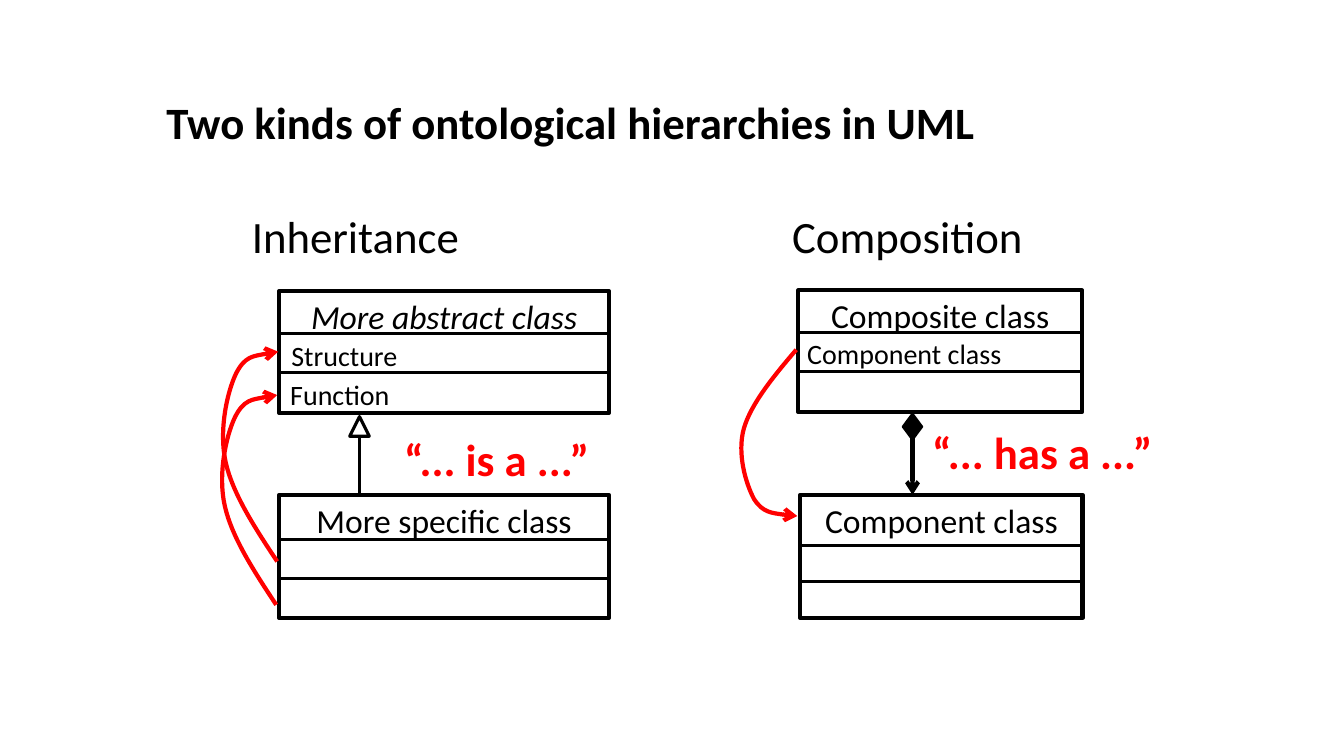
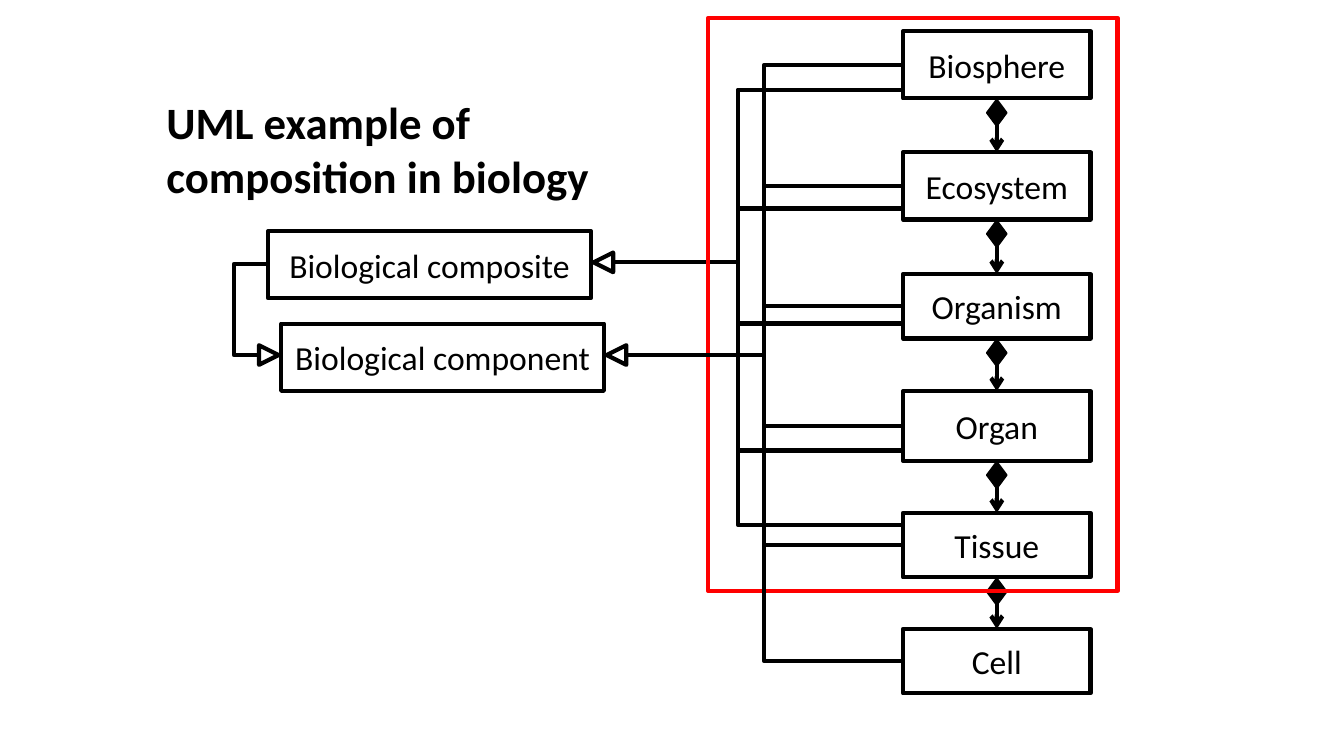
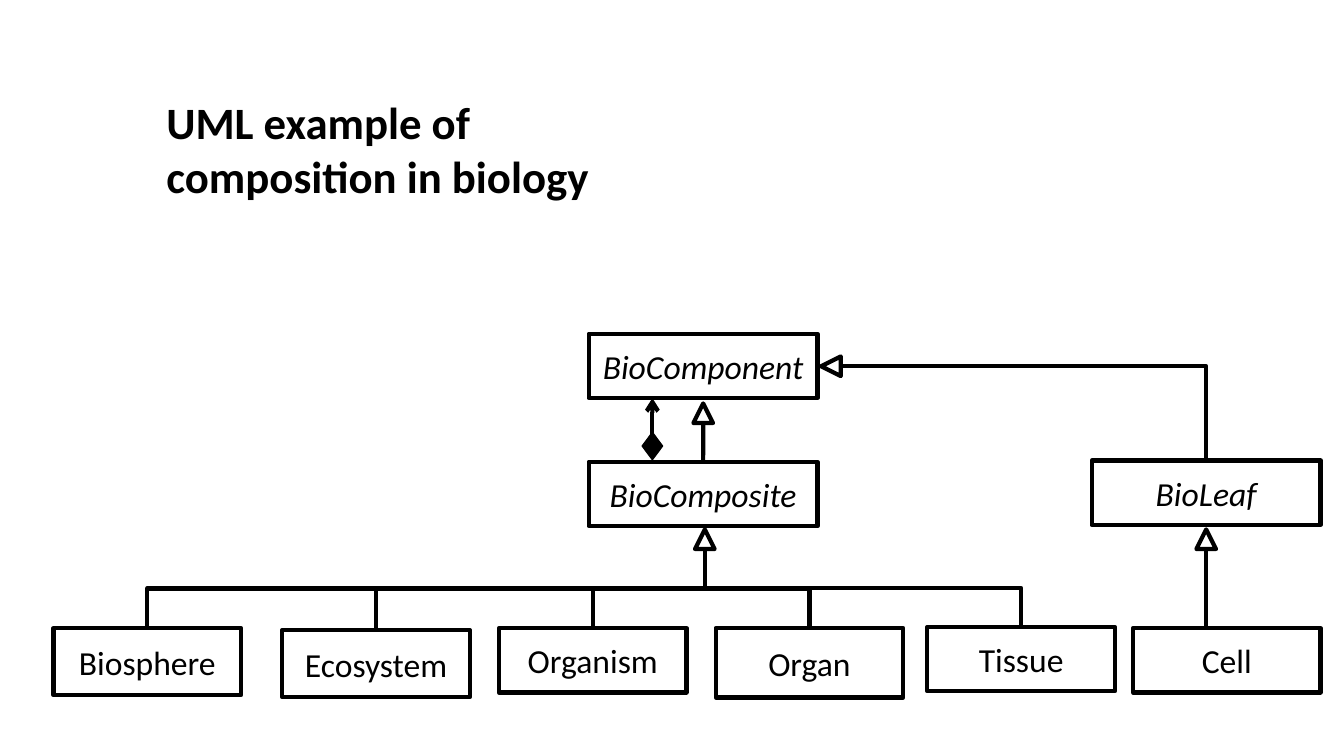
from lxml import etree
from pptx import Presentation
from pptx.dml.color import RGBColor
from pptx.enum import shapes, text
from pptx.oxml.ns import qn
from pptx.util import Pt

COLORS = {"ink": "000000", "accent": "FF0000", "paper": "FFFFFF"}
FONT = "Calibri"
DIAMOND_W, DIAMOND_H = 14.5, 19.5
TRIANGLE = 14
LEVEL_W = 134
LEVELS = ["Biosphere", "Ecosystem", "Organism", "Organ", "Tissue", "Cell"]
LEVEL_HEIGHTS = [48, 48, 46, 49.7, 46, 46]


def rgb(name):
    return RGBColor.from_string(COLORS[name])


class Deck:
    """Holds the shared style and the current slide."""

    def __init__(self):
        self.prs = Presentation()
        self.prs.slide_width, self.prs.slide_height = Pt(960), Pt(540)
        self.s = None

    def slide(self, title, width, height):
        self.s = self.prs.slides.add_slide(self.prs.slide_layouts[5])
        sp = self.s.shapes.title
        sp.left, sp.top, sp.width, sp.height = Pt(111.6), Pt(64), Pt(width), Pt(height)
        self.set_text(sp, title, 32, bold=True)

    # Text and lines
    def set_text(self, sp, words, size, color="ink", bold=False, italic=False,
                 center=False, middle=False, wrap=True):
        tf = sp.text_frame
        tf.text = words
        tf.word_wrap = wrap
        tf.auto_size = text.MSO_AUTO_SIZE.NONE
        tf.vertical_anchor = text.MSO_ANCHOR.MIDDLE if middle else text.MSO_ANCHOR.TOP
        p = tf.paragraphs[0]
        p.alignment = text.PP_ALIGN.CENTER if center else text.PP_ALIGN.LEFT
        f = p.runs[0].font
        f.name, f.size, f.bold, f.italic = FONT, Pt(size), bold, italic
        f.color.rgb = rgb(color)

    def outline(self, sp, width=3, color="ink", arrow=False):
        sp.line.color.rgb = rgb(color)
        sp.line.width = Pt(width)
        if arrow:
            ln = sp.line._get_or_add_ln()
            etree.SubElement(ln, qn("a:tailEnd"), type="arrow")

    def label(self, words, x, y, w, h=46, size=32, **style):
        sp = self.s.shapes.add_textbox(Pt(x), Pt(y), Pt(w), Pt(h))
        self.set_text(sp, words, size, wrap=False, **style)

    # Shapes
    def shape(self, kind, x, y, w, h, fill=None, width=3, color="ink"):
        sp = self.s.shapes.add_shape(kind, Pt(x), Pt(y), Pt(w), Pt(h))
        sp.shadow.inherit = False
        if fill:
            sp.fill.solid()
            sp.fill.fore_color.rgb = rgb(fill)
        else:
            sp.fill.background()
        self.outline(sp, width, color)
        return sp

    def box(self, words, x, y, w, h, fill=None, italic=False, middle=True):
        sp = self.shape(shapes.MSO_SHAPE.RECTANGLE, x, y, w, h, fill)
        self.set_text(sp, words, 24, italic=italic, center=True, middle=middle)
        return sp

    def uml_class(self, words, x, y, w, h, rules, italic=False):
        self.box(words, x, y, w, h, italic=italic, middle=False)
        for rule in rules:
            self.line(x, y + rule, x + w, y + rule, 2.25)

    def triangle(self, cx, cy, rotation=0, width=3):
        half = TRIANGLE / 2
        sp = self.shape(shapes.MSO_SHAPE.ISOSCELES_TRIANGLE, cx - half, cy - half,
                        TRIANGLE, TRIANGLE, "paper", width)
        sp.rotation = rotation

    def composition(self, x, y, end_y, part=None):
        """Diamond centred on x, y with an arrow to the part."""
        self.shape(shapes.MSO_SHAPE.DIAMOND, x - DIAMOND_W / 2, y - DIAMOND_H / 2,
                   DIAMOND_W, DIAMOND_H, "ink", 1)
        c = self.line(x, y, x, end_y, arrow=True)
        if part is not None:
            c.end_connect(part, 0)

    # Connectors
    def connector(self, kind, x1, y1, x2, y2, width=3, arrow=False):
        c = self.s.shapes.add_connector(kind, Pt(x1), Pt(y1), Pt(x2), Pt(y2))
        self.outline(c, width, arrow=arrow)
        etree.SubElement(c._element.spPr, qn("a:effectLst"))
        return c

    def line(self, x1, y1, x2, y2, width=3, arrow=False):
        return self.connector(shapes.MSO_CONNECTOR.STRAIGHT, x1, y1, x2, y2, width, arrow)

    def elbow(self, x1, y1, x2, y2, via_x):
        """Leaves sideways and turns at via_x."""
        c = self.connector(shapes.MSO_CONNECTOR.ELBOW, x1, y1, x2, y2)
        geom = c._element.spPr.find(qn("a:prstGeom"))
        av = geom.find(qn("a:avLst"))
        if av is None:
            av = etree.SubElement(geom, qn("a:avLst"))
        share = round((via_x - x1) / (x2 - x1) * 100000)
        etree.SubElement(av, qn("a:gd"), name="adj1", fmla=f"val {share}")

    def drop(self, x1, y1, x2, y2):
        """Leaves downwards and turns halfway: a sideways elbow, rotated."""
        cx, cy = (x1 + x2) / 2, (y1 + y2) / 2
        w, h = (y2 - y1) / 2, abs(x2 - x1) / 2
        side = 1 if x2 > x1 else -1
        c = self.connector(shapes.MSO_CONNECTOR.ELBOW,
                           cx + side * w, cy - h, cx - side * w, cy + h)
        c._element.spPr.xfrm.set("rot", "16200000" if side > 0 else "5400000")

    def corner(self, x1, y1, x2, y2):
        c = self.connector(shapes.MSO_CONNECTOR.ELBOW, x1, y1, x2, y2)
        c._element.spPr.find(qn("a:prstGeom")).set("prst", "bentConnector2")

    def curve(self, x, y, steps):
        """Red arrow of cubic curves; steps are offsets from the start."""
        fb = self.s.shapes.build_freeform(Pt(x), Pt(y))
        fb.add_line_segments([(Pt(x + dx), Pt(y + dy)) for dx, dy in steps], close=False)
        sp = fb.convert_to_shape()
        sp.shadow.inherit = False
        sp.fill.background()
        self.outline(sp, 3, "accent", arrow=True)
        outline = sp._element.spPr.find(".//" + qn("a:path"))
        segments = outline.findall(qn("a:lnTo"))
        for i in range(0, len(segments), 3):
            bezier = etree.SubElement(outline, qn("a:cubicBezTo"))
            for segment in segments[i:i + 3]:
                bezier.append(segment[0])
                outline.remove(segment)


def hierarchies(d):
    d.slide("Two kinds of ontological hierarchies in UML", 598, 46)
    d.label("Inheritance", 172.8, 145.4, 167)
    d.label("Composition", 558.7, 145.4, 181)

    # Inheritance
    d.uml_class("More specific class", 199.5, 353.5, 235.5, 88, (32, 60))
    d.uml_class("More abstract class", 199.5, 208, 235.5, 87, (30.3, 58.4), italic=True)
    d.label("Structure", 201, 238.3, 194, 31.5, 20)
    d.label("Function", 200.2, 266.4, 194, 31.5, 20)
    d.triangle(256.8, 304.6, width=2.25)
    d.line(256.8, 353, 256.8, 311.8, 2.25)
    d.label("“... is a ...”", 281.5, 304.6, 148, color="accent", bold=True)
    up = [(-15.8, -23.8), (-31.7, -48.2), (-36.7, -70.6), (-41.8, -92.9), (-36, -120.2),
          (-29.5, -133.9), (-23, -146.9), (-9.4, -148.3), (0.7, -149.8)]
    for x, y in ((198, 401), (197.3, 432)):
        d.curve(x, y, up)

    # Composition
    d.uml_class("Composite class", 570.3, 207.4, 202.5, 87, (30.2, 57.9))
    d.label("Component class", 569.5, 236.9, 155, 31.5, 20)
    d.composition(651.8, 304.8, 353.5)
    d.uml_class("Component class", 571.7, 353.5, 201.6, 88, (36.4, 61.9))
    d.label("“... has a ...”", 658.8, 299.5, 173, color="accent", bold=True)
    d.curve(568.8, 249.8, [(-16.6, 19.4), (-32.4, 38.9), (-37.4, 56.2), (-42.5, 74.2),
                           (-36, 95.8), (-30.2, 106.6), (-23.8, 116.6), (-10.1, 118.1),
                           (0.7, 118.8)])


def biology_levels(d):
    d.slide("UML example of composition in biology", 320, 85)

    # Chain of levels
    x, cx = 645, 645 + LEVEL_W / 2
    tops = [22.3, 108.8, 195.8, 279.4, 366.4, 449.3]
    bottom = None
    for name, top, height in zip(LEVELS, tops, LEVEL_HEIGHTS):
        level = d.box(name, x, top, LEVEL_W, height)
        if bottom is not None:
            d.composition(cx, bottom + DIAMOND_H / 2 + 0.5, top, level)
        bottom = top + height

    # Composites: every level but the last
    d.box("Biological composite", 191.5, 165, 230.5, 48)
    d.triangle(431, 187.4, 270)
    for y in (64, 149, 231.1, 321.8, 375):
        d.elbow(x, y, 438, 187.4, 527)
    d.shape(shapes.MSO_SHAPE.RECTANGLE, 506, 12.7, 292.3, 409.5, color="accent")

    # Components: all levels
    d.triangle(192, 253.6, 90)
    d.elbow(191.5, 188.6, 185, 253.6, 167)
    d.box("Biological component", 200.9, 231.2, 230.5, 48)
    d.triangle(440.4, 253.6, 270)
    for top, height in zip(tops, LEVEL_HEIGHTS):
        d.elbow(x, top + height / 2, 447.2, 253.6, 546)


def biology_pattern(d):
    d.slide("UML example of composition in biology", 320, 85)

    # Concrete classes
    lefts = [38.2, 201.6, 356.4, 511.2, 662.4, 809.3]
    tops = [448.6, 450, 448.6, 448.6, 447.8, 448.6]
    for name, x, top, height in zip(LEVELS, lefts, tops, LEVEL_HEIGHTS):
        d.box(name, x, top, LEVEL_W, height)

    # Composite and its subclasses
    composite = d.box("BioComposite", 420.5, 329.8, 163.5, 46, "paper", italic=True)
    d.triangle(503.5, 385.2)
    for x, top in zip(lefts[:-1], tops):
        d.drop(503.5, 392, x + LEVEL_W / 2, top)
    d.composition(466, 318.6, 284.4)

    # Component
    d.box("BioComponent", 420.5, 238.3, 163.5, 46, "paper", italic=True)
    d.triangle(502.3, 295.2)
    d.line(502.3, 302.4, 502.3, 329.8).end_connect(composite, 0)

    # Leaf
    d.box("BioLeaf", 779.8, 329, 163.5, 46, "paper", italic=True)
    d.triangle(861.6, 385.2)
    d.line(861.6, 392, 861.6, 448.6)
    d.triangle(593.6, 261.6, 270)
    d.corner(600.5, 261.6, 861.6, 329)


def main():
    d = Deck()
    hierarchies(d)
    biology_levels(d)
    biology_pattern(d)
    d.prs.save("out.pptx")


if __name__ == "__main__":
    main()
